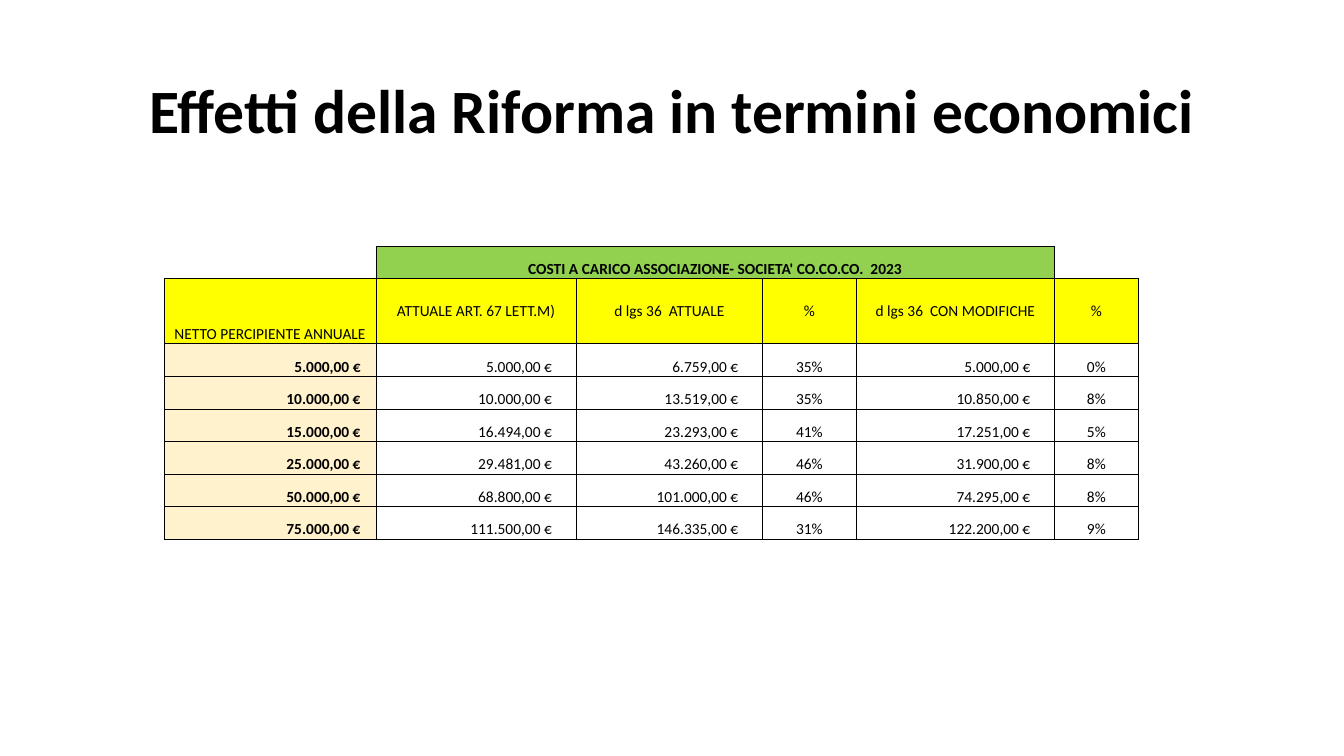
from lxml import etree
from pptx import Presentation
from pptx.dml.color import RGBColor
from pptx.enum.text import MSO_ANCHOR, PP_ALIGN
from pptx.oxml.ns import qn
from pptx.util import Inches, Pt

MID, LOW = MSO_ANCHOR.MIDDLE, MSO_ANCHOR.BOTTOM
CENTER, RIGHT = PP_ALIGN.CENTER, PP_ALIGN.RIGHT
FONT = "Calibri"
HUES = {"ink": "000000", "band": "92D050", "head": "FFFF00",
        "net": "FFF2CC", "plain": "FFFFFF"}
WIDE, HIGH = 13.33, 7.5
TITLE = "Effetti della Riforma in termini economici"
BAND = "COSTI A CARICO ASSOCIAZIONE- SOCIETA' CO.CO.CO.  2023"
HEADS = ["NETTO PERCIPIENTE ANNUALE", "ATTUALE ART. 67 LETT.M)",
         "d lgs 36  ATTUALE", "%", "d lgs 36  CON MODIFICHE", "%"]
COSTS = [
    ("5.000,00 €", "5.000,00 €", "6.759,00 €", "35%", "5.000,00 €", "0%"),
    ("10.000,00 €", "10.000,00 €", "13.519,00 €", "35%", "10.850,00 €", "8%"),
    ("15.000,00 €", "16.494,00 €", "23.293,00 €", "41%", "17.251,00 €", "5%"),
    ("25.000,00 €", "29.481,00 €", "43.260,00 €", "46%", "31.900,00 €", "8%"),
    ("50.000,00 €", "68.800,00 €", "101.000,00 €", "46%", "74.295,00 €", "8%"),
    ("75.000,00 €", "111.500,00 €", "146.335,00 €", "31%", "122.200,00 €", "9%"),
]
COLS = [2.1, 1.99, 1.85, 0.93, 1.97, 0.83]
ROWS = [1, 2] + [1] * len(COSTS)
PADS = [0.15, 0.24, 0.24, 0.01, 0.24, 0.01]


def tint(hue):
    """Return the named colour."""
    return RGBColor.from_string(HUES[hue])


def write(para, text, size, bold, align):
    """Add one styled run to a paragraph."""
    para.alignment = align
    run = para.add_run()
    run.text = text
    font = run.font
    font.name, font.size, font.bold = FONT, Pt(size), bold
    font.color.rgb = tint("ink")


def edge(cell, sides):
    """Draw thin lines on the given sides and clear the others."""
    props = cell._tc.get_or_add_tcPr()
    for side in "LRTB":
        line = etree.SubElement(props, qn("a:ln" + side), w=str(Pt(0.5)))
        if side in sides:
            fill = etree.SubElement(line, qn("a:solidFill"))
            etree.SubElement(fill, qn("a:srgbClr"), val=HUES["ink"])
        else:
            etree.SubElement(line, qn("a:noFill"))


def dress(cell, hue, sides="LRTB", pad=0.01):
    """Set the borders, fill and margins of a cell."""
    edge(cell, sides)
    cell.fill.solid()
    cell.fill.fore_color.rgb = tint(hue)
    cell.margin_left = cell.margin_top = Inches(0.01)
    cell.margin_right, cell.margin_bottom = Inches(pad), 0


def label(cell, text, bold=False, align=CENTER, anchor=LOW):
    """Write the text of a cell."""
    cell.vertical_anchor = anchor
    write(cell.text_frame.paragraphs[0], text, 11, bold, align)


def add_title(slide, left, top, width, height):
    """Place the title in its box."""
    frame = slide.shapes.add_textbox(*map(Inches, (left, top, width, height))).text_frame
    frame.word_wrap = True
    frame.vertical_anchor = MID
    para = frame.paragraphs[0]
    para.line_spacing = 0.9
    write(para, TITLE, 44, True, CENTER)


def add_costs(slide, left, top, width, height):
    """Place the cost table in its box."""
    box = map(Inches, (left, top, width, height))
    table = slide.shapes.add_table(len(ROWS), len(COLS), *box).table
    table.first_row = table.horz_banding = False
    for col, part in zip(table.columns, COLS):
        col.width = Inches(width * part / sum(COLS))
    for row, part in zip(table.rows, ROWS):
        row.height = Inches(height * part / sum(ROWS))

    last = len(COLS) - 1
    dress(table.cell(0, 0), "plain", "RB")
    dress(table.cell(0, last), "plain", "LB")
    for col in range(1, last):
        dress(table.cell(0, col), "band")
    table.cell(0, 1).merge(table.cell(0, last - 1))
    label(table.cell(0, 1), BAND, True)

    for col, text in enumerate(HEADS):
        dress(table.cell(1, col), "head")
        label(table.cell(1, col), text, anchor=MID if col else LOW)

    for row, costs in enumerate(COSTS, 2):
        for col, text in enumerate(costs):
            cell = table.cell(row, col)
            dress(cell, "plain" if col else "net", pad=PADS[col])
            label(cell, text, col == 0, CENTER if "%" in text else RIGHT)


def main():
    """Build and save the slide."""
    deck = Presentation()
    deck.slide_width, deck.slide_height = Inches(WIDE), Inches(HIGH)
    slide = deck.slides.add_slide(deck.slide_layouts[6])
    add_title(slide, 0.92, 0.4, 11.5, 1.45)
    add_costs(slide, 1.63, 2.44, 9.66, 2.91)
    deck.save("out.pptx")


if __name__ == "__main__":
    main()
